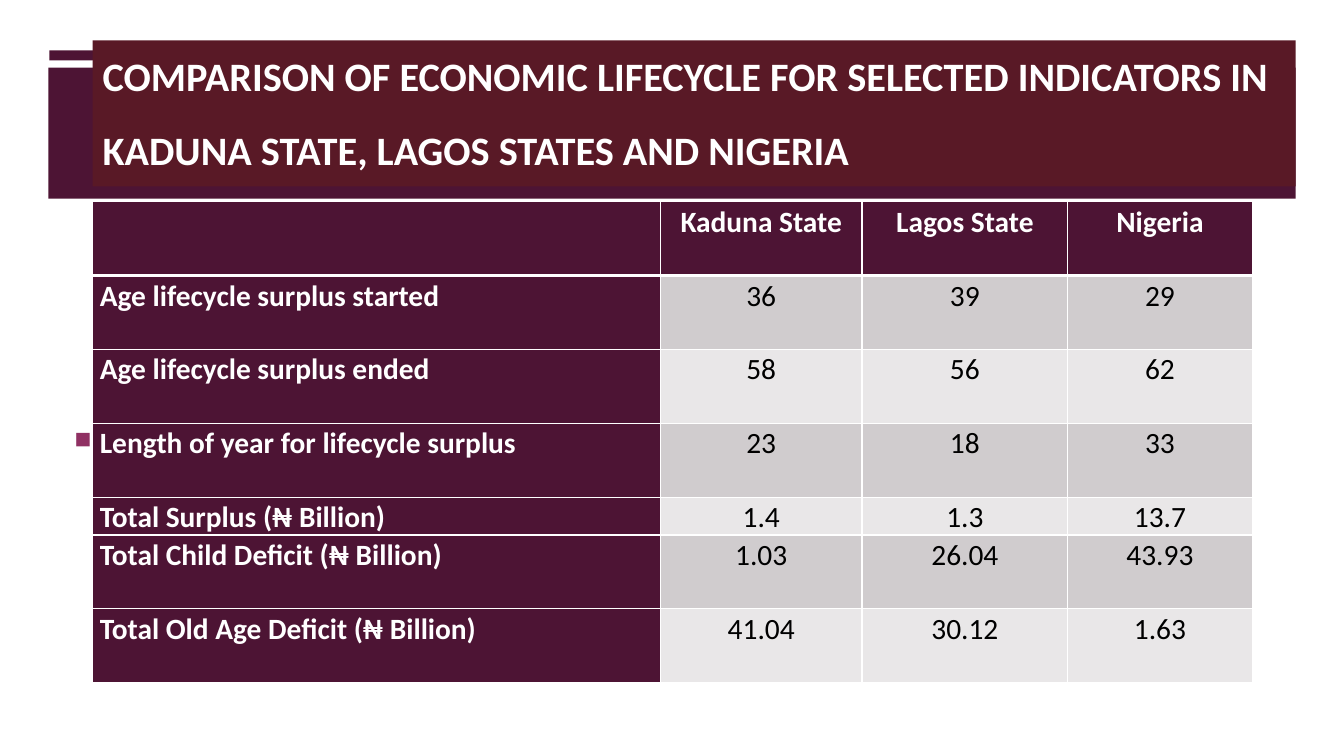
from dataclasses import dataclass

import pptx
import pptx.dml.color
import pptx.enum.shapes
import pptx.enum.text
import pptx.oxml
import pptx.oxml.ns
import pptx.util
from pptx.util import Inches

FONT = "Calibri"
PLUM = "4D1434"
WINE = "591926"
WHITE = "FFFFFF"
BLACK = "000000"
BANDS = ("D0CCCE", "E9E7E8")
ALIGN = pptx.enum.text.PP_ALIGN
ANCHOR = pptx.enum.text.MSO_ANCHOR


@dataclass
class Bar:
    left: float
    top: float
    width: float
    height: float
    fill: str


@dataclass
class Indicator:
    label: str
    values: tuple[str, str, str]
    height: float = 4.4 / 6


BARS = [
    Bar(0.49, 0.5, 4.05, 0.1, PLUM),
    Bar(0.48, 0.67, 12.37, 1.3, PLUM),
]
TITLE_BAR = Bar(0.92, 0.4, 11.93, 1.45, WINE)
COLUMN_WIDTHS = (5.63, 2, 2.04, 1.83)
INDICATORS = [
    Indicator("", ("Kaduna State", "Lagos State", "Nigeria")),
    Indicator("Age lifecycle surplus started", ("36", "39", "29")),
    Indicator("Age lifecycle surplus ended", ("58", "56", "62")),
    Indicator("Length of year for lifecycle surplus", ("23", "18", "33")),
    Indicator("Total Surplus (₦ Billion)", ("1.4", "1.3", "13.7"), 0.36),
    Indicator("Total Child Deficit (₦ Billion)", ("1.03", "26.04", "43.93")),
    Indicator("Total Old Age Deficit (₦ Billion)", ("41.04", "30.12", "1.63")),
]


def color(value: str) -> pptx.dml.color.RGBColor:
    return pptx.dml.color.RGBColor.from_string(value)


def add_run(paragraph, text: str, size: float, fill: str, bold: bool = False) -> None:
    run = paragraph.add_run()
    run.text = text
    run.font.name = FONT
    run.font.size = pptx.util.Pt(size)
    run.font.bold = bold
    run.font.color.rgb = color(fill)


def add_bar(slide, bar: Bar):
    shape = slide.shapes.add_shape(
        pptx.enum.shapes.MSO_SHAPE.RECTANGLE,
        Inches(bar.left), Inches(bar.top), Inches(bar.width), Inches(bar.height),
    )
    shape.shadow.inherit = False
    shape.fill.solid()
    shape.fill.fore_color.rgb = color(bar.fill)
    shape.line.fill.background()
    return shape


def add_title(slide) -> None:
    frame = add_bar(slide, TITLE_BAR).text_frame
    frame.word_wrap = True
    frame.vertical_anchor = ANCHOR.BOTTOM
    paragraph = frame.paragraphs[0]
    paragraph.alignment = ALIGN.LEFT
    paragraph.line_spacing = 0.9
    add_run(
        paragraph,
        "COMPARISON OF ECONOMIC LIFECYCLE FOR SELECTED INDICATORS IN "
        "KADUNA STATE, LAGOS STATES AND NIGERIA",
        28.8, WHITE, True,
    )
    add_run(paragraph, " ", 54, WHITE)


def add_bullet(slide) -> None:
    box = slide.shapes.add_textbox(Inches(0.64), Inches(2.38), Inches(12.06), Inches(4.02))
    frame = box.text_frame
    frame.word_wrap = True
    frame.vertical_anchor = ANCHOR.MIDDLE
    paragraph = frame.paragraphs[0]
    paragraph.space_after = pptx.util.Pt(6)
    add_run(paragraph, ".", 18, "3D3D3D")
    properties = paragraph._p.get_or_add_pPr()
    properties.set("marL", str(Inches(0.33)))
    properties.set("indent", str(Inches(-0.33)))
    namespace = pptx.oxml.ns.nsdecls("a")
    for markup in (
        f'<a:buClr {namespace}><a:srgbClr val="903163"/></a:buClr>',
        f'<a:buSzPct {namespace} val="92000"/>',
        f'<a:buChar {namespace} char="■"/>',
    ):
        properties.append(pptx.oxml.parse_xml(markup))


def set_borders(cell, top: float, bottom: float) -> None:
    properties = cell._tc.get_or_add_tcPr()
    for side, points in (("L", 1), ("R", 1), ("T", top), ("B", bottom)):
        properties.append(pptx.oxml.parse_xml(
            f'<a:ln{side} {pptx.oxml.ns.nsdecls("a")} w="{pptx.util.Pt(points)}">'
            f'<a:solidFill><a:srgbClr val="{WHITE}"/></a:solidFill></a:ln{side}>'
        ))


def fill_cell(cell, text: str, row: int, column: int) -> None:
    heading = row == 0 or column == 0
    set_borders(cell, 3 if row == 1 else 1, 3 if row == 0 else 1)
    cell.fill.solid()
    cell.fill.fore_color.rgb = color(PLUM if heading else BANDS[(row - 1) % 2])
    cell.margin_left = cell.margin_right = Inches(0.07)
    cell.margin_top = cell.margin_bottom = 0
    if text:
        paragraph = cell.text_frame.paragraphs[0]
        paragraph.alignment = ALIGN.CENTER if column else ALIGN.LEFT
        paragraph.line_spacing = 1.07
        paragraph.space_after = pptx.util.Pt(8)
        add_run(paragraph, text, 21, WHITE if heading else BLACK, heading)


def add_indicator_table(slide) -> None:
    table = slide.shapes.add_table(
        len(INDICATORS), len(COLUMN_WIDTHS),
        Inches(0.92), Inches(2), Inches(sum(COLUMN_WIDTHS)), Inches(4.76),
    ).table
    table.horz_banding = False
    for column, width in zip(table.columns, COLUMN_WIDTHS):
        column.width = Inches(width)
    for row, indicator in enumerate(INDICATORS):
        table.rows[row].height = Inches(indicator.height)
        for column, text in enumerate((indicator.label, *indicator.values)):
            fill_cell(table.cell(row, column), text, row, column)


def main() -> None:
    presentation = pptx.Presentation()
    presentation.slide_width = Inches(13.33)
    presentation.slide_height = Inches(7.5)
    slide = presentation.slides.add_slide(presentation.slide_layouts[6])
    for bar in BARS:
        add_bar(slide, bar)
    add_title(slide)
    add_bullet(slide)
    add_indicator_table(slide)
    presentation.save("out.pptx")


if __name__ == "__main__":
    main()
